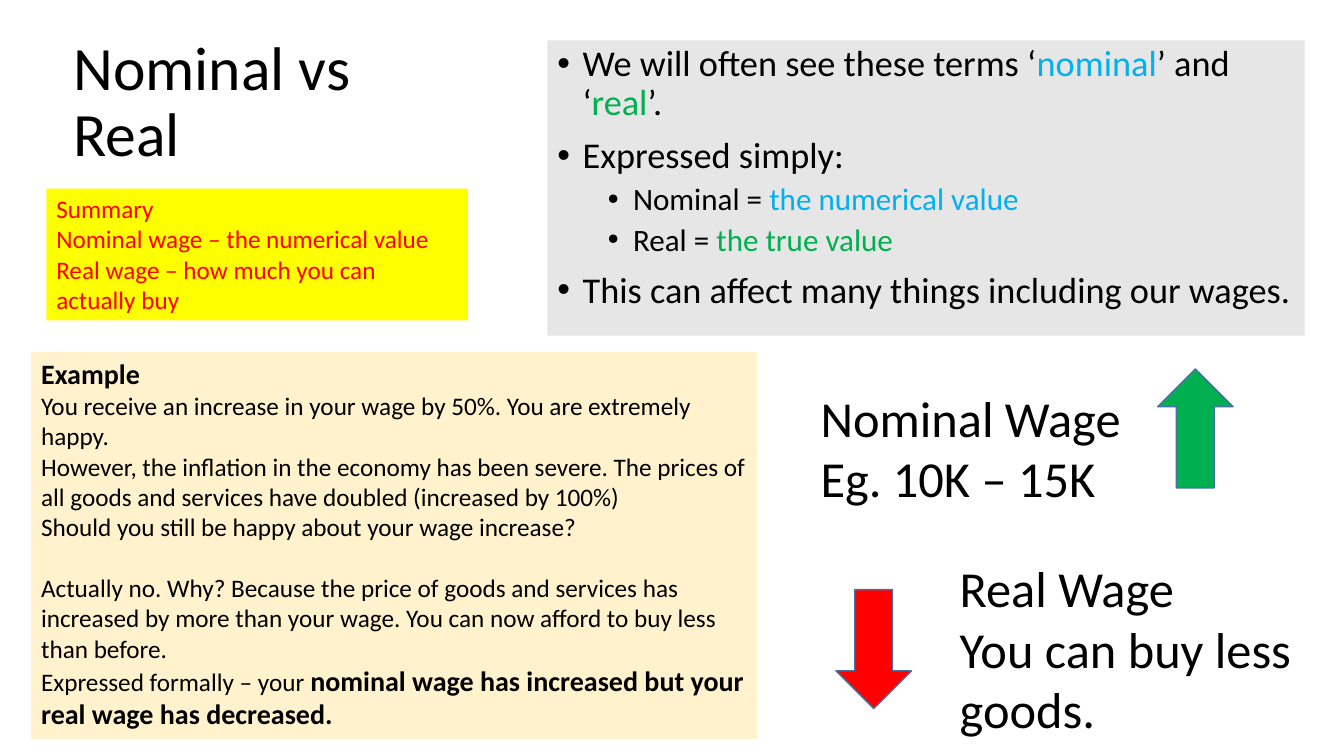
"""Build the slide that compares nominal and real wages."""
from lxml import etree
from pptx import Presentation
from pptx.dml.color import RGBColor
from pptx.enum.shapes import MSO_SHAPE as SHAPE
from pptx.enum.text import MSO_ANCHOR as ANCHOR, PP_ALIGN as ALIGN
from pptx.oxml.ns import qn
from pptx.util import Inches, Pt

FONT = "Calibri"
BLACK = RGBColor(0x00, 0x00, 0x00)
BLUE = RGBColor(0x00, 0xB0, 0xF0)
GREEN = RGBColor(0x00, 0xB0, 0x50)
RED = RGBColor(0xFF, 0x00, 0x00)
YELLOW = RGBColor(0xFF, 0xFF, 0x00)
CREAM = RGBColor(0xFF, 0xF2, 0xCC)
GREY = RGBColor(0xE7, 0xE6, 0xE6)
OUTLINE = RGBColor(0x43, 0x73, 0x9E)

PLAIN = {}
HEADLINE = {"line_spacing": 0.9}
POINT = {"line_spacing": 0.9, "space_before": Pt(10)}
SUBPOINT = {"line_spacing": 0.9, "space_before": Pt(5), "level": 1}
AFTER_GAP = {"space_before": Pt(22)}
BULLET_INDENT = {0: 0.25, 1: 0.75}

BIG = {"size": Pt(36)}
TITLE = {"size": Pt(44)}
BODY = {"size": Pt(18)}
STRONG = {"size": Pt(20), "bold": True}
TERM = {"size": Pt(25.9)}
MEANING = {"size": Pt(22.2)}

TEXTS = [
    ((0.63, 0.1, 3.85, 1.85), None, ANCHOR.MIDDLE, BLACK, [
        (HEADLINE, [("Nominal vs Real", TITLE)]),
    ]),
    ((5.43, 0.4, 7.51, 2.93), GREY, ANCHOR.TOP, BLACK, [
        (POINT, [("We will often see these terms ‘", TERM), ("nominal", TERM, BLUE),
                 ("’ and ‘", TERM), ("real", TERM, GREEN), ("’.", TERM)]),
        (POINT, [("Expressed simply:", TERM)]),
        (SUBPOINT, [("Nominal = ", MEANING), ("the numerical value", MEANING, BLUE)]),
        (SUBPOINT, [("Real = ", MEANING), ("the true value", MEANING, GREEN)]),
        (POINT, [("This can affect many things including our wages.", TERM)]),
    ]),
    ((0.31, 3.49, 7.2, 3.84), CREAM, ANCHOR.TOP, BLACK, [
        (PLAIN, [("Example", STRONG)]),
        (PLAIN, [("You receive an increase in your wage by 50%. "
                  "You are extremely happy.", BODY)]),
        (PLAIN, [("However, the inflation in the economy has been severe. The prices of "
                  "all goods and services have doubled (increased by 100%)", BODY)]),
        (PLAIN, [("Should you still be happy about your wage increase?", BODY)]),
        (AFTER_GAP, [("Actually no. Why? Because the price of goods and services has "
                      "increased by more than your wage. You can now afford to buy less "
                      "than before.", BODY)]),
        (PLAIN, [("Expressed formally – your ", BODY),
                 ("nominal wage has increased but your real wage has decreased.", STRONG)]),
    ]),
    ((8.04, 3.79, 3.52, 1.31), None, ANCHOR.TOP, BLACK, [
        (PLAIN, [("Nominal Wage", BIG)]),
        (PLAIN, [("Eg. 10K – 15K", BIG)]),
    ]),
    ((9.42, 5.48, 3.52, 1.92), None, ANCHOR.TOP, BLACK, [
        (PLAIN, [("Real Wage", BIG)]),
        (PLAIN, [("You can buy less goods.", BIG)]),
    ]),
    ((0.46, 1.87, 4.18, 1.31), YELLOW, ANCHOR.TOP, RED, [
        (PLAIN, [("Summary", BODY)]),
        (PLAIN, [("Nominal wage – the numerical value", BODY)]),
        (PLAIN, [("Real wage – how much you can actually buy", BODY)]),
    ]),
]

ARROWS = [
    ((8.29, 5.85, 0.75, 1.18), RED, 0),
    ((11.48, 3.66, 0.75, 1.18), GREEN, 180),
]


def apply(target, formats):
    for name, value in formats.items():
        setattr(target, name, value)


def add_bullet(paragraph):
    properties = paragraph._p.get_or_add_pPr()
    properties.set("marL", str(Inches(BULLET_INDENT[paragraph.level])))
    properties.set("indent", str(Inches(-0.25)))
    etree.SubElement(properties, qn("a:buFont")).set("typeface", "Arial")
    etree.SubElement(properties, qn("a:buChar")).set("char", "•")


def add_text(slide, box, fill, anchor, color, paragraphs):
    place = [Inches(length) for length in box]
    if fill is None:
        panel = slide.shapes.add_textbox(*place)
    else:
        panel = slide.shapes.add_shape(SHAPE.RECTANGLE, *place)
        panel.shadow.inherit = False
        panel.fill.solid()
        panel.fill.fore_color.rgb = fill
        panel.line.fill.background()
    frame = panel.text_frame
    apply(frame, {"word_wrap": True, "vertical_anchor": anchor})
    for index, (layout, runs) in enumerate(paragraphs):
        paragraph = frame.add_paragraph() if index else frame.paragraphs[0]
        apply(paragraph, {"alignment": ALIGN.LEFT, **layout})
        if layout in (POINT, SUBPOINT):
            add_bullet(paragraph)
        for words, style, *accent in runs:
            run = paragraph.add_run()
            run.text = words
            apply(run.font, {"name": FONT, **style})
            run.font.color.rgb = accent[0] if accent else color


def add_arrow(slide, box, fill, rotation):
    arrow = slide.shapes.add_shape(SHAPE.DOWN_ARROW, *[Inches(length) for length in box])
    arrow.shadow.inherit = False
    arrow.rotation = rotation
    arrow.fill.solid()
    arrow.fill.fore_color.rgb = fill
    arrow.line.color.rgb = OUTLINE
    arrow.line.width = Pt(1)


def main():
    deck = Presentation()
    deck.slide_width, deck.slide_height = Inches(13.33), Inches(7.5)
    slide = deck.slides.add_slide(deck.slide_layouts[6])
    for text in TEXTS:
        add_text(slide, *text)
    for arrow in ARROWS:
        add_arrow(slide, *arrow)
    deck.save("out.pptx")


if __name__ == "__main__":
    main()
